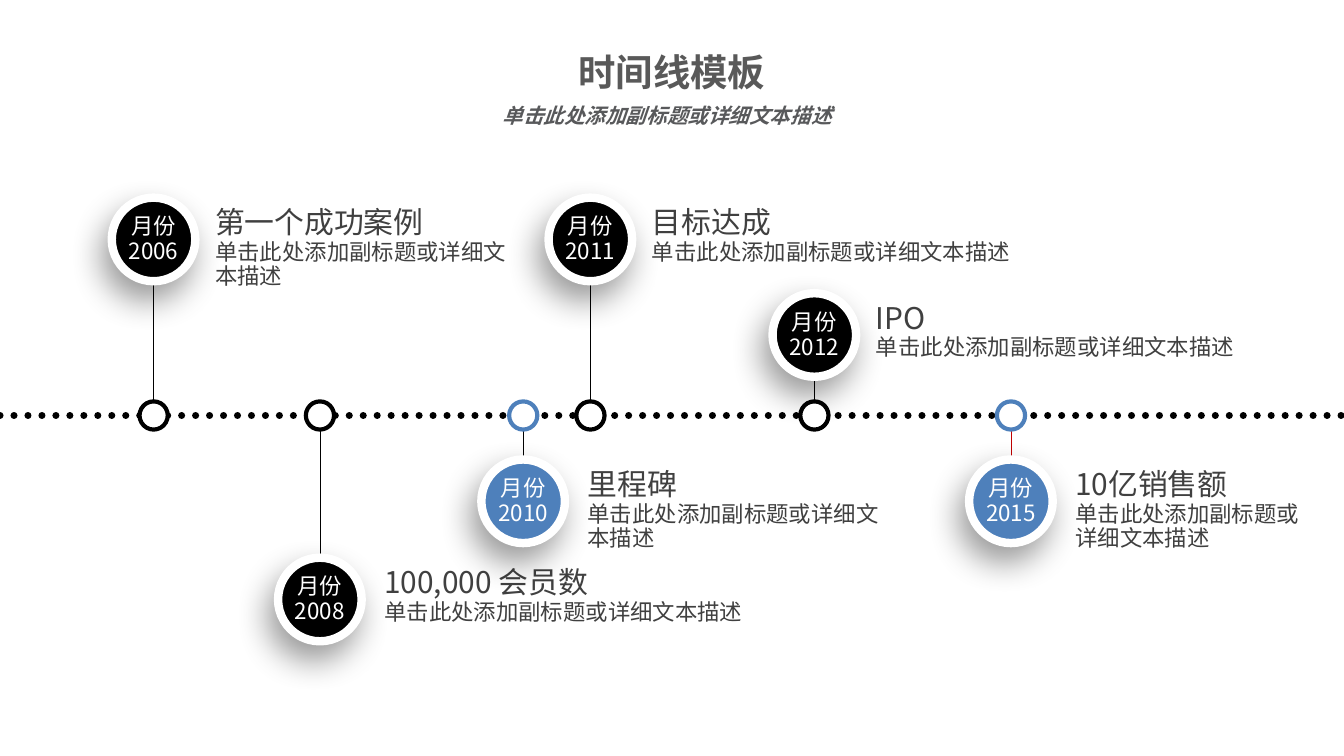
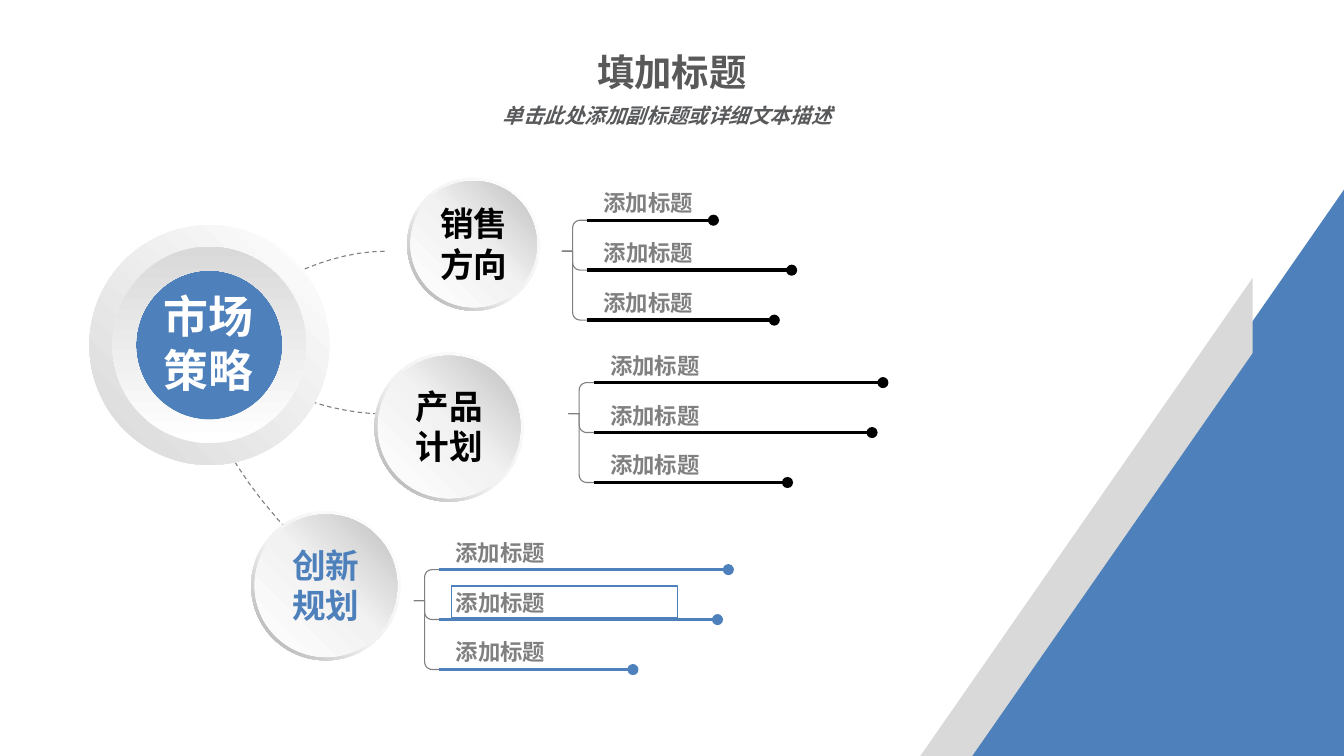
from dataclasses import dataclass

from lxml.etree import SubElement
from pptx import Presentation
from pptx.dml.color import RGBColor
from pptx.enum.dml import MSO_LINE
from pptx.enum.shapes import MSO_CONNECTOR, MSO_SHAPE
from pptx.enum.text import MSO_ANCHOR, MSO_AUTO_SIZE, PP_ALIGN
from pptx.oxml import parse_xml
from pptx.oxml.ns import nsdecls, qn
from pptx.util import Pt


@dataclass(frozen=True)
class Style:
    size: float
    color: str
    bold: bool = False
    italic: bool = False


class Theme:
    font = "Noto Sans CJK SC"
    black, white, blue, red = "000000", "FFFFFF", "4E80BB", "C00000"
    grey, light = "808080", "D9D9D9"
    title = Style(20, "595959", True)
    subtitle = Style(11, "58595B", True, True)
    badge = Style(12, white)
    heading = Style(16, "404040")
    body = Style(12, "404040")
    row = Style(12, grey, True)
    core = Style(24, white, True)
    disc_size = 18
    line_pitch = Pt(13.2)
    rim_stops = [(0, white), (55, "F2F2F2"), (100, "A6A6A6")]
    face_stops = [(0, white), (51, "F2F2F2"), (100, "BFBFBF")]
    ring_stops = [(0, white), (100, light)]


DETAIL = "单击此处添加副标题或详细文本描述"


def rgb(color):
    return RGBColor.from_string(color)


# Text
def write(tf, lines, align=PP_ALIGN.LEFT, spacing=None, insets=(7.2, 3.6, 7.2, 3.6),
          wrap=True, anchor=MSO_ANCHOR.TOP, grow=False):
    tf.margin_left, tf.margin_top, tf.margin_right, tf.margin_bottom = map(Pt, insets)
    tf.word_wrap = wrap
    tf.vertical_anchor = anchor
    tf.auto_size = MSO_AUTO_SIZE.SHAPE_TO_FIT_TEXT if grow else MSO_AUTO_SIZE.NONE
    for i, (text, style) in enumerate(lines):
        p = tf.paragraphs[0] if i == 0 else tf.add_paragraph()
        p.alignment = align
        if spacing:
            p.line_spacing = spacing
        for j, part in enumerate(text.split("\n")):
            if j:
                p.add_line_break()
            r = p.add_run()
            r.text = part
            f = r.font
            f.name, f.size = Theme.font, Pt(style.size)
            f.bold, f.italic = style.bold, style.italic
            f.color.rgb = rgb(style.color)
            SubElement(r._r.get_or_add_rPr(), qn("a:ea"), typeface=Theme.font)


def textbox(s, x, y, w, h, lines, **options):
    tb = s.shapes.add_textbox(Pt(x), Pt(y), Pt(w), Pt(h))
    write(tb.text_frame, lines, **options)
    return tb


# Shapes
def shape(s, kind, x, y, w, h, fill=None, line=None, width=1):
    sp = s.shapes.add_shape(kind, Pt(x), Pt(y), Pt(w), Pt(h))
    sp.shadow.inherit = False
    if fill:
        sp.fill.solid()
        sp.fill.fore_color.rgb = rgb(fill)
    if line:
        sp.line.color.rgb = rgb(line)
        sp.line.width = Pt(width)
    else:
        sp.line.fill.background()
    return sp


def gradient(sp, stops, angle):
    sp.fill.gradient()
    spPr = sp._element.spPr
    marks = "".join(f'<a:gs pos="{pos * 1000}"><a:srgbClr val="{color}"/></a:gs>'
                    for pos, color in stops)
    spPr.replace(spPr.find(qn("a:gradFill")), parse_xml(
        f'<a:gradFill {nsdecls("a")} rotWithShape="1"><a:gsLst>{marks}</a:gsLst>'
        f'<a:lin ang="{angle * 60000}" scaled="0"/></a:gradFill>'))


def donut(s, x, y, w, h, thickness, stops, angle):
    sp = shape(s, MSO_SHAPE.DONUT, x, y, w, h)
    sp.adjustments[0] = thickness
    gradient(sp, stops, angle)


def drop_shadow(sp):
    effects = sp._element.spPr.find(qn("a:effectLst"))
    effects.append(parse_xml(
        f'<a:outerShdw {nsdecls("a")} blurRad="{Pt(18)}" dist="{Pt(9)}" '
        f'dir="{114 * 60000}" algn="ctr" rotWithShape="0"><a:srgbClr val="000000">'
        '<a:alpha val="40000"/></a:srgbClr></a:outerShdw>'))


# Lines
def line(s, x1, y1, x2, y2, color, width, dotted=False, oval_end=False):
    c = s.shapes.add_connector(MSO_CONNECTOR.STRAIGHT, Pt(x1), Pt(y1), Pt(x2), Pt(y2))
    c.line.color.rgb = rgb(color)
    c.line.width = Pt(width)
    ln = c.line._get_or_add_ln()
    if dotted:
        c.line.dash_style = MSO_LINE.ROUND_DOT
        ln.set("cap", "rnd")
    if oval_end:
        SubElement(ln, qn("a:tailEnd"), type="oval")
    SubElement(c._element.spPr, qn("a:effectLst"))


def bezier(a, b, c, d, steps=16):
    points = []
    for i in range(steps + 1):
        t = i / steps
        weights = ((1 - t) ** 3, 3 * t * (1 - t) ** 2, 3 * t * t * (1 - t), t ** 3)
        points.append(tuple(sum(k * p[axis] for k, p in zip(weights, (a, b, c, d)))
                            for axis in (0, 1)))
    return points


def open_path(s, points, dashed=False):
    start, *rest = [(Pt(x), Pt(y)) for x, y in points]
    fb = s.shapes.build_freeform(*start)
    fb.add_line_segments(rest, close=False)
    sp = fb.convert_to_shape()
    sp.shadow.inherit = False
    sp.fill.background()
    sp.line.color.rgb = rgb(Theme.grey)
    sp.line.width = Pt(0.6)
    if dashed:
        sp.line.dash_style = MSO_LINE.DASH


# Shared slide header
def new_slide(prs, title):
    s = prs.slides.add_slide(prs.slide_layouts[6])
    textbox(s, 280.8, 26.6, 158.4, 24.5, [(title, Theme.title)],
            align=PP_ALIGN.CENTER, insets=(0, 0, 0, 0), grow=True)
    textbox(s, 261.4, 51.8, 192.2, 20.9, [(DETAIL, Theme.subtitle)],
            align=PP_ALIGN.CENTER, wrap=False, grow=True)
    return s


# Timeline
AXIS_Y, BADGE, DOT = 222.6, 44.8, 15.1


def stem(s, x, top, color):
    if top < AXIS_Y:
        line(s, x, top + BADGE, x, AXIS_Y - DOT / 2, color, 0.25)
    else:
        line(s, x, AXIS_Y + DOT / 2, x, top, color, 0.25)


def milestone(s, x, top, color, year, heading, width, height):
    badge = shape(s, MSO_SHAPE.OVAL, x - BADGE / 2, top, BADGE, BADGE,
                  color, Theme.white, 4.5)
    drop_shadow(badge)
    write(badge.text_frame, [(f"月份\n{year}", Theme.badge)], align=PP_ALIGN.CENTER,
          spacing=Theme.line_pitch, insets=(0, 3.6, 0, 3.6), wrap=False,
          anchor=MSO_ANCHOR.MIDDLE)
    gap = 25.9 if top < AXIS_Y else 27.4
    textbox(s, x + gap, top + 5.9, width, height,
            [(heading, Theme.heading), (DETAIL, Theme.body)],
            spacing=Theme.line_pitch, grow=True)
    shape(s, MSO_SHAPE.OVAL, x - DOT / 2, AXIS_Y - DOT / 2, DOT, DOT,
          Theme.white, color, 2.25)


def timeline_slide(prs):
    s = new_slide(prs, "时间线模板")
    black, blue = Theme.black, Theme.blue
    milestones = [
        (82.3, 105.9, black, 2006, "第一个成功案例", 181.4, 46.8),
        (171.4, 298.8, black, 2008, "100,000 会员数", 210.2, 33.8),
        (316.3, 105.9, black, 2011, "目标达成", 207.4, 33.8),
        (280.3, 246.2, blue, 2010, "里程碑", 181.4, 46.8),
        (436.3, 157.1, black, 2012, "IPO", 207.4, 33.8),
        (541.6, 246.2, blue, 2015, "10亿销售额", 141.1, 46.8),
    ]
    for x, top, _, year, *_ in milestones:
        stem(s, x, top, Theme.red if year == 2015 else black)
    line(s, 0, AXIS_Y, 720, AXIS_Y, black, 3.75, dotted=True)
    for item in milestones:
        milestone(s, *item)


# Strategy map
def corner_triangles(s):
    for x, y, w, h, color in [(507.6, 96.5, 216, 311, Theme.blue),
                              (490.3, 149, 180.7, 260, Theme.light),
                              (519.1, 113.8, 204.5, 293.8, Theme.blue)]:
        sp = shape(s, MSO_SHAPE.RIGHT_TRIANGLE, x, y, w, h, color)
        sp._element.spPr.xfrm.set("flipH", "1")


def disc(s, x, y, size, words, color):
    donut(s, x, y, size, size, 0.049, Theme.rim_stops, 135)
    face = shape(s, MSO_SHAPE.OVAL, x + 1.8, y + 1.8, size - 3.6, size - 3.6)
    gradient(face, Theme.face_stops, 315)
    style = Style(Theme.disc_size, color, True)
    textbox(s, x - 2, y + size / 2 - 22, size + 4, 44, [(word, style) for word in words],
            align=PP_ALIGN.CENTER, insets=(0, 0, 0, 0), grow=True)


def core(s):
    shape(s, MSO_SHAPE.OVAL, 59.8, 136.1, 101.5, 101.5, Theme.blue)
    donut(s, 47.9, 120.6, 128.5, 128.5, 0.101, Theme.ring_stops, 135)
    donut(s, 60.3, 132.3, 103.7, 105.1, 0.121, Theme.ring_stops, 270)
    textbox(s, 75.6, 151.2, 72, 65.5, [("市场策略", Theme.core)],
            align=PP_ALIGN.CENTER, grow=True)


def bracket(s, x, y, row_y):
    spine, end, radius = x + 5.8, x + 13.7, 4
    turn = radius if row_y > y else -radius
    corner = bezier((spine, row_y - turn), (spine, row_y - turn * 0.45),
                    (spine + radius * 0.45, row_y), (spine + radius, row_y), 6)
    open_path(s, [(x, y), (spine, y), *corner, (end, row_y)])


def branch(s, x, y, color, rows, outlined=None):
    for i, (length, width) in enumerate(rows):
        row_y = y - 16.6 + 26.75 * i
        start = x + 13.7
        bracket(s, x, y, row_y)
        line(s, start, row_y, start + length, row_y, color, 1.8, oval_end=True)
        label = textbox(s, start + 6.5, row_y - 18, width, 17.3,
                        [("添加标题", Theme.row)], insets=(2.2, 0.7, 2.2, 0.7),
                        anchor=MSO_ANCHOR.MIDDLE)
        if i == outlined:
            label.line.color.rgb = rgb(color)
            label.line.width = Pt(0.75)


def strategy_slide(prs):
    s = new_slide(prs, "填加标题")
    corner_triangles(s)
    # Dashed links from the core to the discs
    for curve in [((122.4, 182.2), (122.4, 161.3), (168.5, 134.6), (206.6, 134.6)),
                  ((122.4, 182.2), (122.4, 200.2), (168.5, 221.8), (206.6, 221.8)),
                  ((113, 193), (97.2, 220.3), (150.5, 295.2), (209.5, 329))]:
        open_path(s, bezier(*curve), dashed=True)
    # Branches with underlined rows: (underline length, label width)
    long_rows = [(154.8, 125.3), (149, 121), (103.7, 77.8)]
    branch(s, 301, 134.6, Theme.black, [(67.5, 53.3), (109.4, 85.7), (100.1, 76.3)])
    branch(s, 304.5, 221.6, Theme.black, long_rows)
    branch(s, 221.7, 321.8, Theme.blue, long_rows, outlined=1)
    # Discs
    disc(s, 134.6, 273.8, 80, ("创新", "规划"), Theme.blue)
    core(s)
    disc(s, 218.1, 95.2, 71.3, ("销售", "方向"), Theme.black)
    disc(s, 200.6, 188.8, 80, ("产品", "计划"), Theme.black)


def main():
    prs = Presentation()
    prs.slide_width, prs.slide_height = Pt(720), Pt(405)
    timeline_slide(prs)
    strategy_slide(prs)
    prs.save("out.pptx")


if __name__ == "__main__":
    main()
